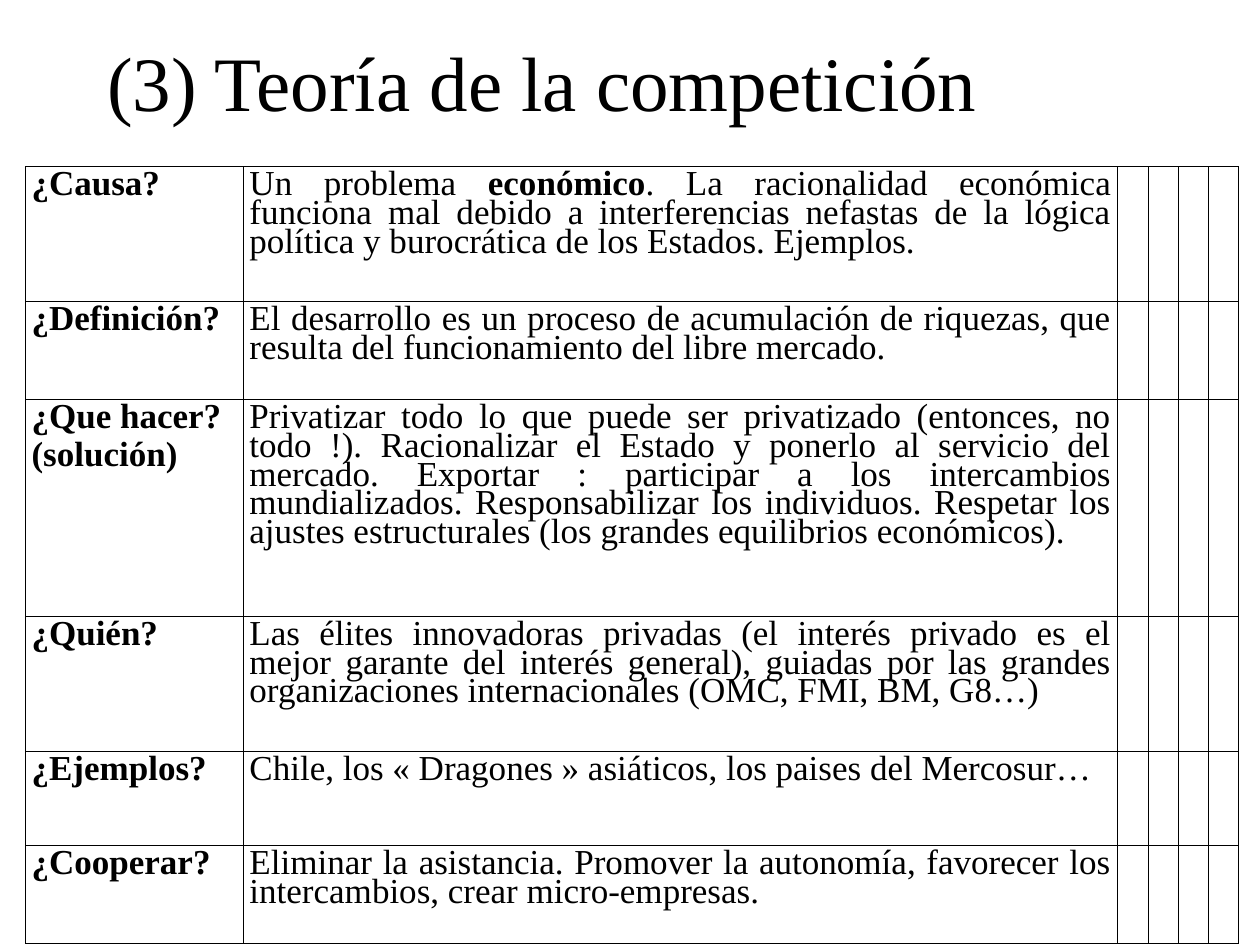
from lxml.etree import SubElement
from pptx import Presentation
from pptx.dml.color import RGBColor
from pptx.enum.text import MSO_ANCHOR, MSO_AUTO_SIZE, PP_ALIGN
from pptx.oxml.ns import qn
from pptx.util import Inches, Pt

BLACK = RGBColor(0, 0, 0)
WHITE = RGBColor(255, 255, 255)
FONT = "Times New Roman"
INSET = Inches(0.05)

COLUMN_WIDTHS = [1.73, 6.94] + [0.24] * 4
ROW_HEIGHTS = [1.07, 0.78, 1.72, 1.07, 0.75, 0.78]

# Each row: question lines, then the answer as (text, bold) runs.
ROWS = [
    (["¿Causa?"],
     [("Un problema ", False), ("económico", True),
      (". La racionalidad económica funciona mal debido a interferencias "
       "nefastas de la lógica política y burocrática de los Estados. "
       "Ejemplos.", False)]),
    (["¿Definición?"],
     [("El desarrollo es un proceso de acumulación de riquezas, que resulta "
       "del funcionamiento del libre mercado.", False)]),
    (["¿Que hacer?", "(solución)"],
     [("Privatizar todo lo que puede ser privatizado (entonces, no todo !). "
       "Racionalizar el Estado y ponerlo al servicio del mercado. Exportar : "
       "participar a los intercambios mundializados. Responsabilizar los "
       "individuos. Respetar los ajustes estructurales (los grandes "
       "equilibrios económicos).", False)]),
    (["¿Quién?"],
     [("Las élites innovadoras privadas (el interés privado es el mejor "
       "garante del interés general), guiadas por las grandes "
       "organizaciones internacionales (OMC, FMI, BM, G8…)", False)]),
    (["¿Ejemplos?"],
     [("Chile, los « Dragones » asiáticos, los paises del Mercosur…", False)]),
    (["¿Cooperar?"],
     [("Eliminar la asistancia. Promover la autonomía, favorecer los "
       "intercambios, crear micro-empresas.", False)]),
]


def write_text(frame, paragraphs, size=20, align=PP_ALIGN.JUSTIFY,
               line_spacing=0.74, space_before=5):
    """Fill a text frame; each paragraph is a list of (text, bold) runs."""
    for index, runs in enumerate(paragraphs):
        paragraph = frame.add_paragraph() if index else frame.paragraphs[0]
        paragraph.alignment = align
        paragraph.line_spacing = line_spacing
        paragraph.space_before = Pt(space_before)
        for text, bold in runs:
            run = paragraph.add_run()
            run.text = text
            run.font.name = FONT
            run.font.size = Pt(size)
            run.font.bold = bold
            run.font.color.rgb = BLACK


def set_insets(owner):
    owner.margin_left = owner.margin_right = INSET
    owner.margin_top = owner.margin_bottom = INSET


def add_borders(cell, width=0.25):
    properties = cell._tc.get_or_add_tcPr()
    for side in ("a:lnL", "a:lnR", "a:lnT", "a:lnB"):
        line = SubElement(properties, qn(side), w=str(Pt(width)))
        fill = SubElement(line, qn("a:solidFill"))
        SubElement(fill, qn("a:srgbClr"), val=str(BLACK))


def add_title(slide, text):
    title = slide.shapes.title
    title.left, title.top = Inches(0.8), Inches(0.25)
    title.width, title.height = Inches(8.4), Inches(0.78)
    frame = title.text_frame
    frame.auto_size = MSO_AUTO_SIZE.NONE
    frame.vertical_anchor = MSO_ANCHOR.MIDDLE
    set_insets(frame)
    write_text(frame, [[(text, False)]], size=44, align=PP_ALIGN.LEFT,
               line_spacing=1.0, space_before=0)


def add_theory_table(slide):
    table = slide.shapes.add_table(
        len(ROW_HEIGHTS), len(COLUMN_WIDTHS), Inches(0.2), Inches(1.32),
        Inches(sum(COLUMN_WIDTHS)), Inches(sum(ROW_HEIGHTS))).table
    table.first_row = table.horz_banding = False
    for column, width in zip(table.columns, COLUMN_WIDTHS):
        column.width = Inches(width)
    for row, height in zip(table.rows, ROW_HEIGHTS):
        row.height = Inches(height)
    for cell in table.iter_cells():
        set_insets(cell)
        add_borders(cell)
        cell.fill.background()
    for index, (question, answer) in enumerate(ROWS):
        write_text(table.cell(index, 0).text_frame,
                   [[(line, True)] for line in question])
        write_text(table.cell(index, 1).text_frame, [answer])


def main():
    presentation = Presentation()
    presentation.slide_width = Inches(10)
    presentation.slide_height = Inches(7.5)
    slide = presentation.slides.add_slide(presentation.slide_layouts[5])
    slide.background.fill.solid()
    slide.background.fill.fore_color.rgb = WHITE
    add_title(slide, "(3) Teoría de la competición")
    add_theory_table(slide)
    presentation.save("out.pptx")


if __name__ == "__main__":
    main()
